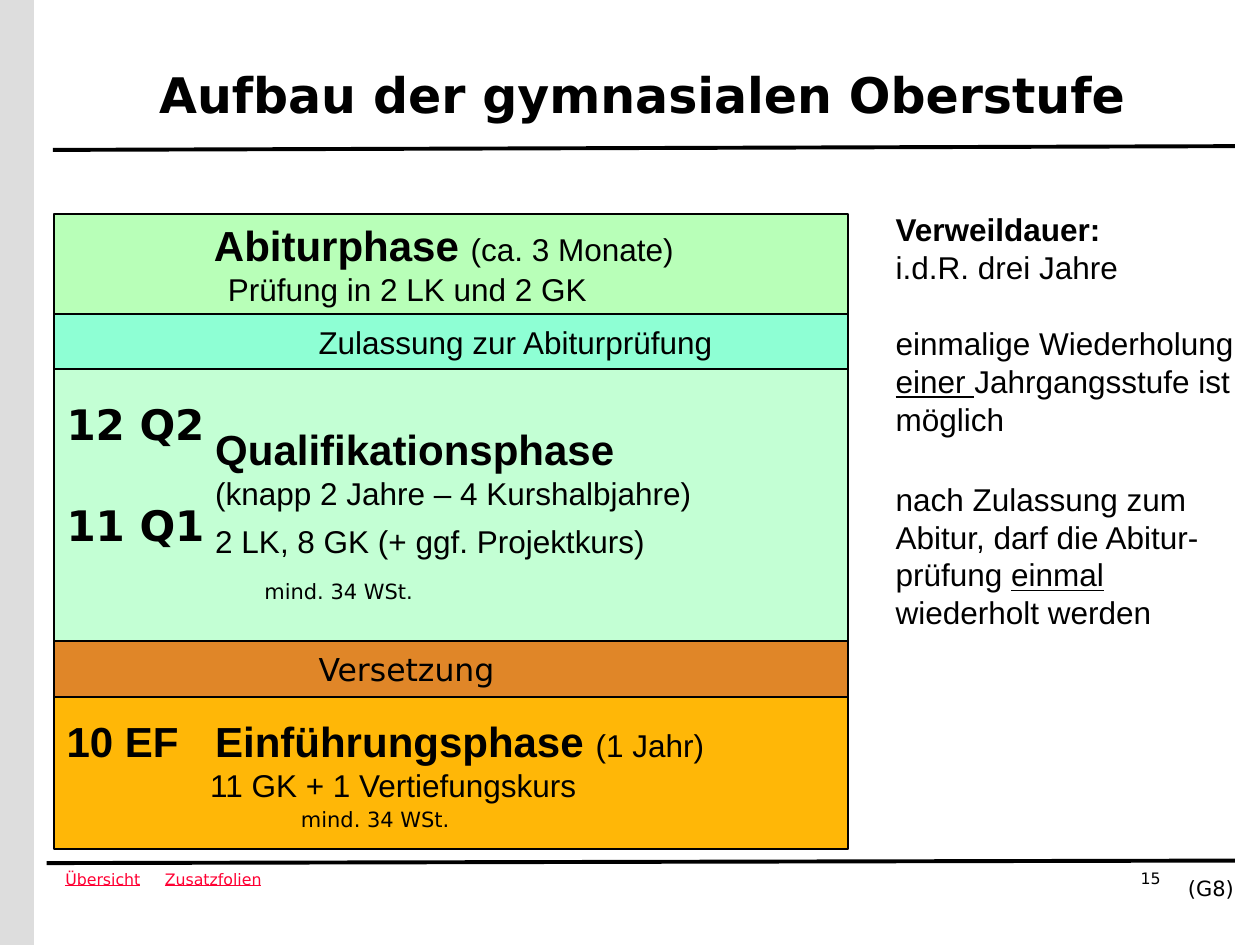
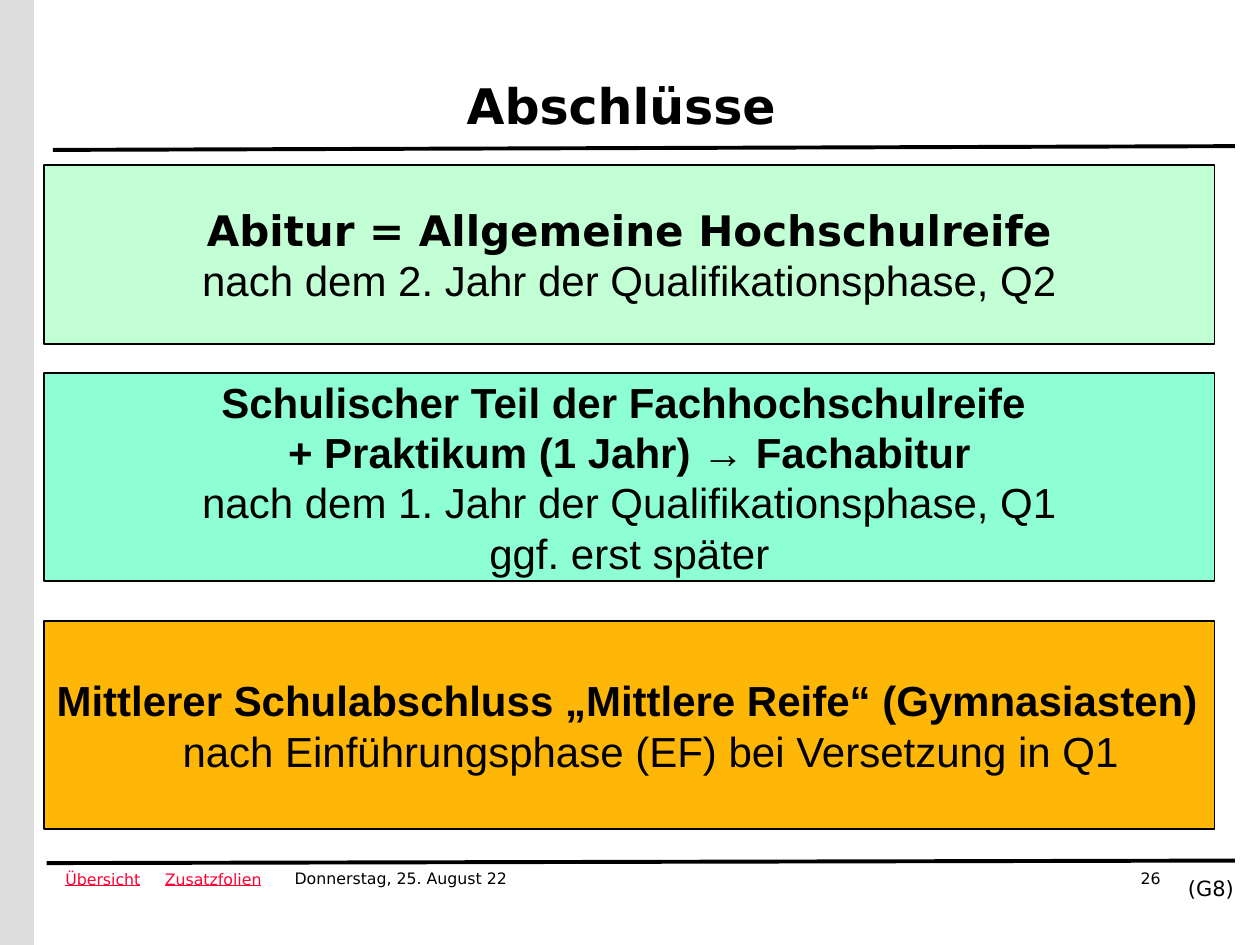
import pptx
import pptx.dml.color
import pptx.enum.shapes
import pptx.enum.text
import pptx.util
from lxml import etree

Inches, Pt = pptx.util.Inches, pptx.util.Pt
Align = pptx.enum.text.PP_ALIGN
Anchor = pptx.enum.text.MSO_ANCHOR
RECT = pptx.enum.shapes.MSO_SHAPE.RECTANGLE
LINE = pptx.enum.shapes.MSO_CONNECTOR.STRAIGHT

BLACK, RED, GREY = "000000", "FF0033", "DDDDDD"
GREEN, MINT, AQUA = "B8FFB8", "C3FFD4", "8EFFD4"
BROWN, GOLD = "E08628", "FFB707"
SANS, ARIAL = "DejaVu Sans", "Arial"


def tint(code):
    return pptx.dml.color.RGBColor.from_string(code)


def write(shape, paras, wrap=True, mid=False, align=Align.LEFT, ink=BLACK, top=0.05):
    """Each paragraph: left indent, first-line shift, space before, runs.
    Each run: text, size, font, then style letters (b = bold, u = underline)."""
    frame = shape.text_frame
    frame.word_wrap = wrap
    frame.vertical_anchor = Anchor.MIDDLE if mid else Anchor.TOP
    frame.margin_left = frame.margin_right = Inches(0.1)
    frame.margin_top, frame.margin_bottom = Inches(top), Inches(0.05)
    for n, (left, shift, gap, runs) in enumerate(paras):
        para = frame.add_paragraph() if n else frame.paragraphs[0]
        para.alignment = align
        para.space_before, para.space_after = Pt(gap), Pt(0)
        para.line_spacing = Pt(1.2 * max(run[1] for run in runs))
        props = para._p.get_or_add_pPr()
        props.set("marL", str(Inches(left)))
        props.set("indent", str(Inches(shift)))
        for text, size, face, style in runs:
            run = para.add_run()
            run.text = text
            run.font.size, run.font.name = Pt(size), face
            run.font.bold, run.font.underline = "b" in style, "u" in style
            run.font.color.rgb = tint(ink)


deck = pptx.Presentation()
deck.slide_width, deck.slide_height = Inches(10), Inches(7.5)

# What differs per slide: title, its box, page number, date
heads = [
    ("Aufbau der gymnasialen Oberstufe", (0.37, 0.31, 9.45, 0.87), "15", None),
    ("Abschlüsse", (0.43, 0.21, 9, 1.25), "26", "Donnerstag, 25. August 22"),
]

# Boxes: left, width, then per box top, height, fill, top inset, paragraphs, align
stage = (0.43, 6.3, [
    (1.7, 0.79, GREEN, None, Align.LEFT, [
        (1.17, 0, 0, [("Abiturphase ", 24, ARIAL, "b"), ("(ca. 3 Monate)", 18, ARIAL, "")]),
        (1.28, 0, 0, [("Prüfung in 2 LK und 2 GK", 18, ARIAL, "")])]),
    (2.81, 2.28, MINT, 0.35, Align.LEFT, [
        (0, 0, 0, [("12 Q2", 24, SANS, "b")]),
        (0, 0, 29, [("11 Q1", 24, SANS, "b")])]),
    (5.32, 1.42, GOLD, None, Align.LEFT, [
        (1.18, -1.18, 0, [("10 EF\tEinführungsphase ", 24, ARIAL, "b"),
                          ("(1 Jahr)", 18, ARIAL, "")]),
        (1.14, 0, 0, [("11 GK + 1 Vertiefungskurs", 18, ARIAL, "")])]),
    (5.09, 0.44, BROWN, None, Align.LEFT, [
        (2, 0, 0, [("Versetzung", 18, SANS, "")])]),
    (2.49, 0.44, AQUA, None, Align.LEFT, [
        (2, 0, 0, [("Zulassung zur Abiturprüfung", 18, ARIAL, "")])]),
])
grade = (0.35, 9.29, [
    (1.31, 1.42, MINT, None, Align.CENTER, [
        (0, 0, 0, [("Abitur = Allgemeine Hochschulreife", 24, SANS, "b")]),
        (0, 0, 0, [("nach dem 2. Jahr der Qualifikationsphase, Q2", 24, ARIAL, "")])]),
    (4.93, 1.65, GOLD, None, Align.LEFT, [
        (0, 0, 0, [("Mittlerer Schulabschluss „Mittlere Reife“ (Gymnasiasten)", 24, ARIAL, "b")]),
        (1, 0, 0, [("nach Einführungsphase (EF) bei Versetzung in Q1", 24, ARIAL, "")])]),
    (2.96, 1.65, AQUA, None, Align.CENTER, [
        (0, 0, 0, [("Schulischer Teil der Fachhochschulreife ", 24, ARIAL, "b")]),
        (0, 0, 0, [("+ Praktikum (1 Jahr) → Fachabitur", 24, ARIAL, "b")]),
        (0, 0, 0, [("nach dem 1. Jahr der Qualifikationsphase, Q1", 24, ARIAL, "")]),
        (0, 0, 0, [("ggf. erst später", 24, ARIAL, "")])]),
])

for (name, place, page, date), (left, width, boxes) in zip(heads, (stage, grade)):
    slide = deck.slides.add_slide(deck.slide_layouts[5])
    shapes = slide.shapes

    # Title
    title = shapes.title
    title.left, title.top, title.width, title.height = map(Inches, place)
    write(title, [(0, 0, 0, [(name, 28, SANS, "b")])], mid=True, align=Align.CENTER)

    # Rules above and below the content
    for ends in ((0.42, 1.19, 9.8, 1.16), (0.37, 6.85, 9.8, 6.83)):
        rule = shapes.add_connector(LINE, *map(Inches, ends))
        rule.line.color.rgb, rule.line.width = tint(BLACK), Pt(2.25)
        etree.SubElement(rule._element.spPr, pptx.oxml.ns.qn("a:effectLst"))

    # Side band
    band = shapes.add_shape(RECT, 0, 0, Inches(0.27), deck.slide_height)
    band.shadow.inherit = False
    band.fill.solid()
    band.fill.fore_color.rgb = tint(GREY)
    band.line.fill.background()

    # Footer
    foot = [
        ((1.21, 6.85, 0.97, 0.25), "Zusatzfolien", 9, "u", RED, Align.LEFT),
        ((0.42, 6.85, 0.8, 0.25), "Übersicht", 9, "u", RED, Align.LEFT),
        ((9.33, 6.9, 0.67, 0.3), "(G8)", 12, "", BLACK, Align.LEFT),
        ((8.44, 6.85, 0.87, 0.5), page, 9, "", BLACK, Align.RIGHT),
    ]
    if date:
        foot.append(((2.24, 6.85, 2.13, 0.5), date, 9, "", BLACK, Align.LEFT))
    for spot, text, size, style, ink, align in foot:
        note = shapes.add_textbox(*map(Inches, spot))
        write(note, [(0, 0, 0, [(text, size, SANS, style)])],
              wrap=style != "u", align=align, ink=ink)

    # Coloured boxes
    for top, height, fill, inset, align, paras in boxes:
        box = shapes.add_shape(RECT, *map(Inches, (left, top, width, height)))
        box.shadow.inherit = False
        box.fill.solid()
        box.fill.fore_color.rgb = tint(fill)
        box.line.color.rgb, box.line.width = tint(BLACK), Pt(1)
        write(box, paras, wrap=boxes is stage[2], mid=inset is None,
              align=align, top=inset or 0.05)

# Free text on the first slide
shapes = deck.slides[0].shapes
phase = shapes.add_textbox(*map(Inches, (1.61, 3.12, 4.02, 1.57)))
write(phase, [
    (0, 0, 0, [("Qualifikationsphase", 24, ARIAL, "b")]),
    (0, 0, 0, [("(knapp 2 Jahre – 4 Kurshalbjahre)", 18, ARIAL, "")]),
    (0, 0, 6, [("2 LK, 8 GK (+ ggf. Projektkurs)", 18, ARIAL, "")]),
], wrap=False, mid=True)

stay = shapes.add_textbox(*map(Inches, (7.01, 1.62, 2.99, 4.88)))
write(stay, [
    (0, 0, 0, [("Verweildauer:", 18, ARIAL, "b")]),
    (0, 0, 0, [("i.d.R. drei Jahre", 18, ARIAL, "")]),
    (0, 0, 22, [("einmalige Wiederholung", 18, ARIAL, "")]),
    (0, 0, 0, [("einer ", 18, ARIAL, "u"), ("Jahrgangsstufe ist möglich", 18, ARIAL, "")]),
    (0, 0, 24, [("nach Zulassung zum Abitur, darf die Abitur-prüfung ", 18, ARIAL, ""),
                ("einmal", 18, ARIAL, "u"), (" wiederholt werden", 18, ARIAL, "")]),
])

for x, y in ((2, 4.54), (2.29, 6.35)):
    hours = shapes.add_textbox(*map(Inches, (x, y, 1.49, 0.3)))
    write(hours, [(0, 0, 0, [("mind. 34 WSt.", 12, SANS, "")])], wrap=False)

deck.save("out.pptx")
